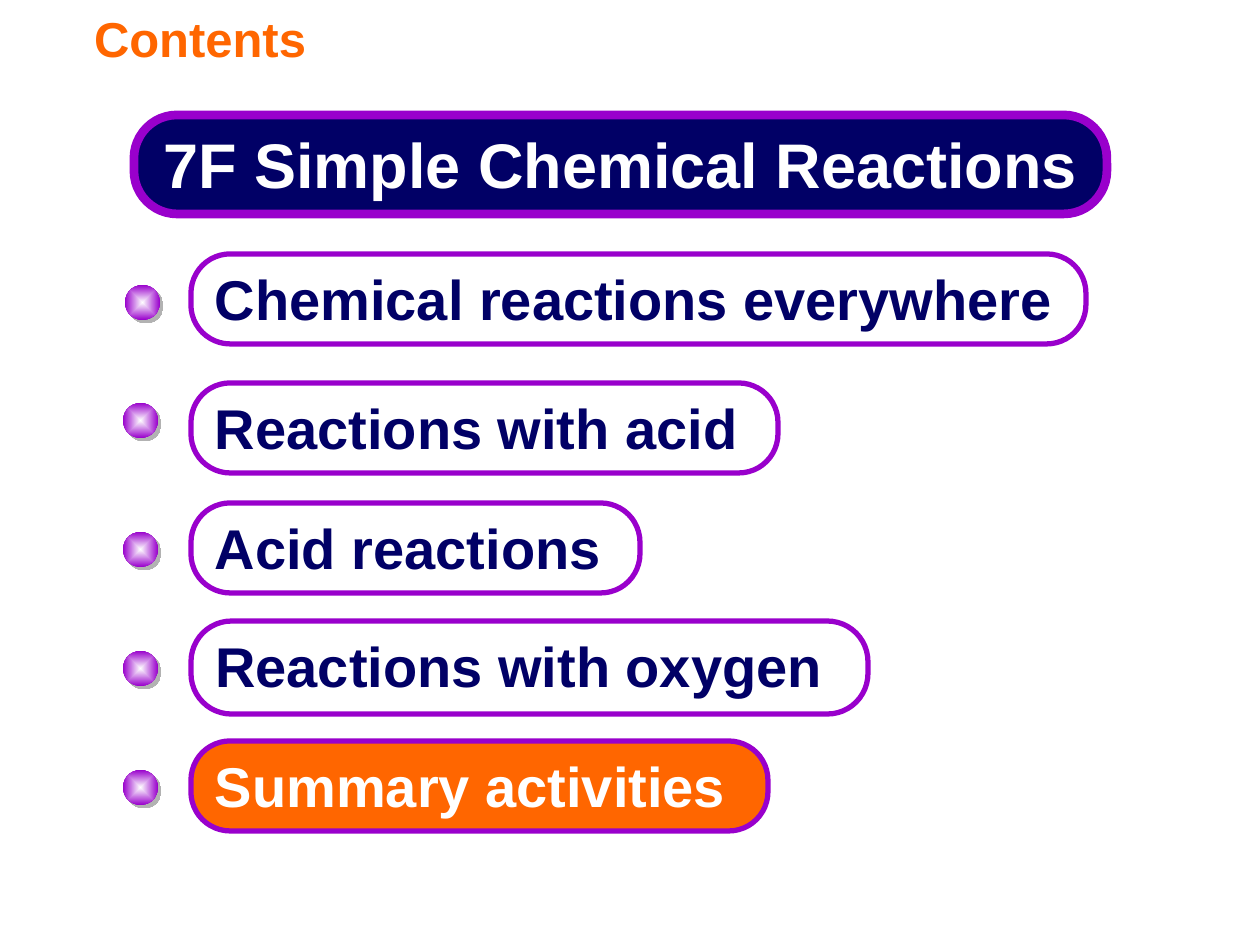
from lxml.etree import fromstring
from pptx import Presentation
from pptx.dml.color import RGBColor
from pptx.enum.shapes import MSO_SHAPE as SHAPE
from pptx.enum.text import MSO_ANCHOR as ANCHOR, PP_ALIGN as ALIGN
from pptx.oxml.ns import nsdecls
from pptx.util import Emu, Pt

PX = 914400 / 126
COLORS = {"navy": "010066", "purple": "9900CC", "orange": "FF6600",
          "white": "FFFFFF", "grey": "B2B2B2"}

HEADING = "Contents"
UNIT = "7F Simple Chemical Reactions"
# text, box top, box width, box height, bullet left, bullet top
TOPICS = [
    ("Chemical reactions everywhere", 254, 895, 90, 125, 285),
    ("Reactions with acid", 383, 587, 90, 123, 403),
    ("Acid reactions", 503, 449, 90, 123, 532),
    ("Reactions with oxygen", 621, 677, 93, 123, 651),
    ("Summary activities", 741, 577, 90, 123, 770),
]
CURRENT = "Summary activities"
TOPIC_LEFT, BULLET_SIZE = 191, 35

GRADIENT = f"""<a:gradFill {nsdecls('a')} rotWithShape="1"><a:gsLst>
<a:gs pos="0"><a:srgbClr val="{COLORS['white']}"/></a:gs>
<a:gs pos="100000"><a:srgbClr val="{COLORS['purple']}"/></a:gs></a:gsLst>
<a:path path="shape"><a:fillToRect l="50000" t="50000" r="50000" b="50000"/></a:path>
</a:gradFill>"""
SHADOW = f"""<a:effectLst {nsdecls('a')}>
<a:outerShdw dist="{Pt(2.8)}" dir="2700000" algn="ctr" rotWithShape="0">
<a:srgbClr val="{COLORS['grey']}"/></a:outerShdw></a:effectLst>"""


def px(*values):
    return [Emu(round(v * PX)) for v in values]


def rgb(name):
    return RGBColor.from_string(COLORS[name])


def write(tf, text, size, color, align=ALIGN.LEFT, spacing=0.9):
    tf.word_wrap = True
    p = tf.paragraphs[0]
    p.alignment, p.line_spacing = align, spacing
    r = p.add_run()
    r.text = text
    for name, value in {"name": "Arial", "size": Pt(size), "bold": True}.items():
        setattr(r.font, name, value)
    r.font.color.rgb = rgb(color)


def add_pill(s, box, text, size, color, fill, line, align=ALIGN.LEFT):
    """Rounded box with a purple outline; fill None leaves it open."""
    sp = s.shapes.add_shape(SHAPE.ROUNDED_RECTANGLE, *px(*box))
    sp.adjustments[0] = 0.436
    sp.shadow.inherit = False
    if fill:
        sp.fill.solid()
        sp.fill.fore_color.rgb = rgb(fill)
    else:
        sp.fill.background()
    sp.line.color.rgb = rgb("purple")
    sp.line.width = Pt(line)
    sp.text_frame.vertical_anchor = ANCHOR.TOP
    write(sp.text_frame, text, size, color, align)


def add_bullet(s, left, top):
    sp = s.shapes.add_shape(SHAPE.OVAL, *px(left, top, BULLET_SIZE, BULLET_SIZE))
    sp.line.fill.background()
    props = sp.element.spPr
    props.find("{*}prstGeom").addnext(fromstring(GRADIENT))
    props.append(fromstring(SHADOW))


def main():
    prs = Presentation()
    prs.slide_width, prs.slide_height = px(1260, 945)
    s = prs.slides.add_slide(prs.slide_layouts[5])

    title = s.shapes.title
    title.left, title.top, title.width, title.height = px(0, 0, 898, 76)
    title.text_frame.margin_left = px(94)[0]
    title.text_frame.vertical_anchor = ANCHOR.MIDDLE
    write(title.text_frame, HEADING, 28, "orange", spacing=1.0)

    add_pill(s, (134, 115, 973, 99), UNIT, 36, "white", "navy", 5, ALIGN.CENTER)
    for text, top, width, height, bullet_left, bullet_top in TOPICS:
        color, fill = ("white", "orange") if text == CURRENT else ("navy", None)
        add_pill(s, (TOPIC_LEFT, top, width, height), text, 32, color, fill, 3)
        add_bullet(s, bullet_left, bullet_top)

    prs.save("out.pptx")


if __name__ == "__main__":
    main()
